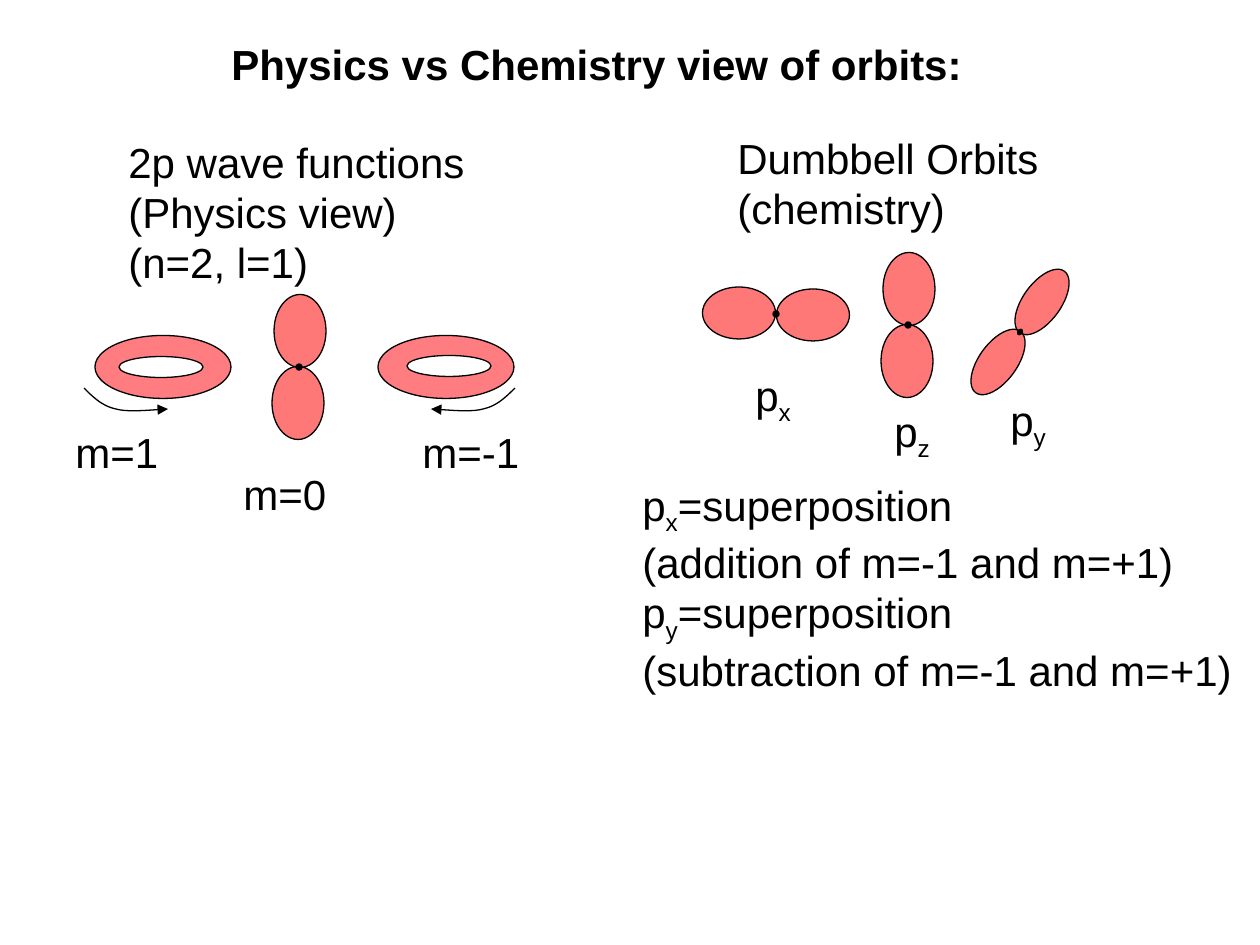
from dataclasses import dataclass
from lxml.etree import SubElement
from pptx import Presentation
from pptx.dml.color import RGBColor
from pptx.enum.shapes import MSO_SHAPE
from pptx.enum.text import MSO_AUTO_SIZE
from pptx.oxml.ns import qn
from pptx.util import Pt

SCALE = 914400 / 126


def emu(px):
    return round(px * SCALE)


@dataclass(frozen=True)
class Theme:
    font: str = "Arial"
    size: int = 24
    line: float = 0.75
    ink: str = "000000"
    lobe: str = "FF0000"
    ring: str = "FF7C80"
    paper: str = "FFFFFF"
    alpha: int = 53


class Board:
    def __init__(self, slide, theme):
        self.slide = slide
        self.theme = theme

    def text(self, x, y, w, h, lines, bold=False, wrap=False):
        box = self.slide.shapes.add_textbox(emu(x), emu(y), emu(w), emu(h))
        frame = box.text_frame
        frame.word_wrap = wrap
        frame.auto_size = MSO_AUTO_SIZE.SHAPE_TO_FIT_TEXT
        for i, line in enumerate(lines):
            para = frame.add_paragraph() if i else frame.paragraphs[0]
            para.font.name = self.theme.font
            para.font.size = Pt(self.theme.size)
            para.font.bold = bold
            para.font.color.rgb = RGBColor.from_string(self.theme.ink)
            self.runs(para, line)

    def runs(self, para, line):
        base, mark, rest = line.partition("_")
        para.add_run().text = base
        if mark:
            sub = para.add_run()
            sub.text = rest[0]
            sub._r.get_or_add_rPr().set("baseline", "-25000")
            if rest[1:]:
                para.add_run().text = rest[1:]

    def trim(self, shape):
        shape.shadow.inherit = False
        shape.line.color.rgb = RGBColor.from_string(self.theme.ink)
        shape.line.width = Pt(self.theme.line)

    def oval(self, cx, cy, w, h, color, turn=0, alpha=100):
        shape = self.slide.shapes.add_shape(
            MSO_SHAPE.OVAL, emu(cx - w / 2), emu(cy - h / 2), emu(w), emu(h))
        shape.rotation = turn
        shape.fill.solid()
        shape.fill.fore_color.rgb = RGBColor.from_string(color)
        self.trim(shape)
        if alpha < 100:
            tint = shape.fill._xPr.find(".//" + qn("a:srgbClr"))
            SubElement(tint, qn("a:alpha"), val=str(alpha * 1000))

    def bell(self, cx, cy, dx, dy, turn=0, w=73, h=52, dot=6):
        for side in (1, -1):
            self.oval(cx + side * dx, cy + side * dy, w, h,
                      self.theme.lobe, turn, self.theme.alpha)
        self.oval(cx, cy, 6, dot, self.theme.ink, turn)

    def ring(self, cx, cy, hole_x, hole_y):
        self.oval(cx, cy, 136, 63, self.theme.ring)
        self.oval(hole_x, hole_y, 84, 21, self.theme.paper)

    def arc(self, x, y, side):
        bends = [
            [(0, 0), (9, 9), (18, 18), (32, 21)],
            [(32, 21), (46, 25), (75, 21), (84, 21)],
        ]
        steps = 12
        dots = []
        for a, b, c, d in bends:
            for i in range(1, steps + 1):
                t = i / steps
                u = 1 - t
                px, py = (
                    u**3 * a[k] + 3 * u * u * t * b[k]
                    + 3 * u * t * t * c[k] + t**3 * d[k] for k in (0, 1))
                dots.append((emu(x + side * px), emu(y + py)))
        pen = self.slide.shapes.build_freeform(emu(x), emu(y))
        pen.add_line_segments(dots, close=False)
        shape = pen.convert_to_shape()
        shape.fill.background()
        self.trim(shape)
        SubElement(shape.line._get_or_add_ln(), qn("a:tailEnd"), type="triangle")


def main():
    deck = Presentation()
    deck.slide_width = emu(1260)
    deck.slide_height = emu(945)
    board = Board(deck.slides.add_slide(deck.slide_layouts[6]), Theme())

    board.text(630, 473, 630, 214, [
        "p_x=superposition", "(addition of m=-1 and m=+1)",
        "p_y=superposition", "(subtraction of m=-1 and m=+1)"], wrap=True)
    board.text(219, 32, 767, 63,
               ["Physics vs Chemistry view of orbits:"], bold=True)
    board.text(725, 126, 326, 113, ["Dumbbell Orbits", "(chemistry)"])
    board.text(116, 130, 362, 164,
               ["2p wave functions", "(Physics view)", "(n=2, l=1)"])

    board.bell(776, 314, 37, 1)
    board.bell(908, 325, 1, -36, turn=90)
    board.bell(1020, 332, 22, -30, turn=125.9, w=76, h=38, dot=4)
    board.bell(299, 367, 1, -36, turn=90)

    board.ring(163, 367, 161, 367)
    board.ring(446, 367, 449, 366)
    board.arc(84, 388, 1)
    board.arc(515, 388, -1)

    labels = [
        (231, 462, 108, "m=0"), (63, 420, 108, "m=1"),
        (410, 420, 122, "m=-1"), (743, 363, 63, "p_x"),
        (882, 399, 63, "p_z"), (998, 388, 63, "p_y"),
    ]
    for x, y, w, label in labels:
        board.text(x, y, w, 63, [label])

    deck.save("out.pptx")


if __name__ == "__main__":
    main()
